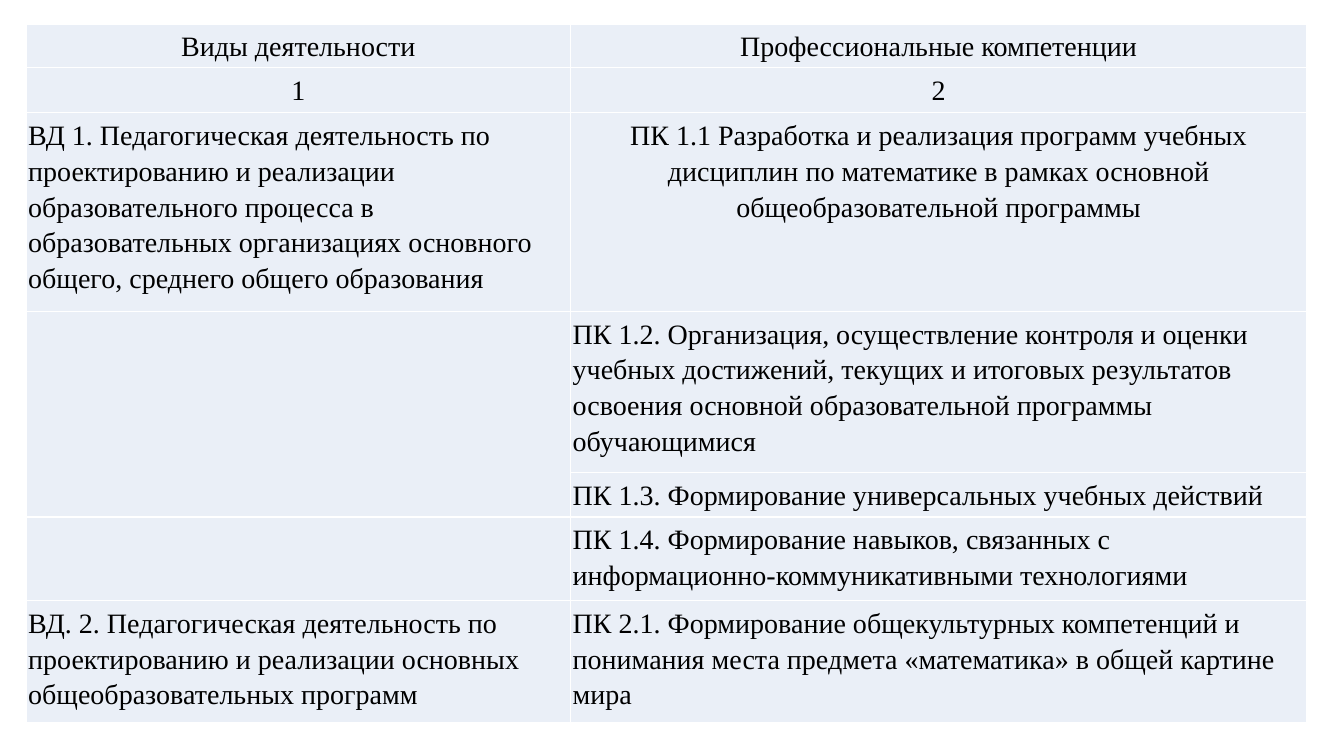
from dataclasses import dataclass

from lxml import etree
from pptx import Presentation
from pptx.dml.color import RGBColor
from pptx.enum.text import PP_ALIGN
from pptx.oxml.ns import qn
from pptx.util import Inches, Pt

LEFT, CENTER = PP_ALIGN.LEFT, PP_ALIGN.CENTER
COLORS = {"text": "000000", "cell": "EAEFF7", "border": "FFFFFF"}
FONT = "Times New Roman"
COLUMN_WIDTHS = (5.4, 7.3)


@dataclass(frozen=True)
class CompetencyRow:
    height: float
    activity: str
    competency: str
    activity_align: PP_ALIGN = LEFT
    competency_align: PP_ALIGN = LEFT


ROWS = [
    CompetencyRow(0.43, "Виды деятельности", "Профессиональные компетенции", CENTER, CENTER),
    CompetencyRow(0.45, "1", "2", CENTER, CENTER),
    CompetencyRow(
        1.97,
        "ВД 1. Педагогическая деятельность по проектированию и реализации "
        "образовательного процесса в образовательных организациях основного "
        "общего, среднего общего образования",
        "ПК 1.1 Разработка и реализация программ учебных дисциплин по "
        "математике в рамках основной общеобразовательной программы",
        competency_align=CENTER,
    ),
    CompetencyRow(
        1.6,
        "",
        "ПК 1.2. Организация, осуществление контроля и оценки учебных "
        "достижений, текущих и итоговых результатов освоения основной "
        "образовательной программы обучающимися",
    ),
    CompetencyRow(0.44, "", "ПК 1.3. Формирование универсальных учебных действий"),
    CompetencyRow(
        0.83,
        "",
        "ПК 1.4. Формирование навыков, связанных с "
        "информационно-коммуникативными технологиями",
    ),
    CompetencyRow(
        1.21,
        "ВД. 2. Педагогическая деятельность по проектированию и реализации "
        "основных общеобразовательных программ",
        "ПК 2.1. Формирование общекультурных компетенций и понимания места "
        "предмета «математика» в общей картине мира",
    ),
]


def add_borders(cell) -> None:
    properties = cell._tc.get_or_add_tcPr()
    for side in ("a:lnL", "a:lnR", "a:lnT", "a:lnB"):
        line = etree.SubElement(properties, qn(side), w=str(Pt(1)))
        fill = etree.SubElement(line, qn("a:solidFill"))
        etree.SubElement(fill, qn("a:srgbClr"), val=COLORS["border"])


def fill_cell(cell, text: str, align: PP_ALIGN) -> None:
    add_borders(cell)
    cell.fill.solid()
    cell.fill.fore_color.rgb = RGBColor.from_string(COLORS["cell"])
    cell.margin_left = cell.margin_right = Inches(0.02)
    cell.margin_top = cell.margin_bottom = Inches(0.03)
    if not text:
        return
    cell.text = text
    paragraph = cell.text_frame.paragraphs[0]
    paragraph.alignment = align
    paragraph.line_spacing = 1.15
    paragraph.font.name = FONT
    paragraph.font.size = Pt(20)
    paragraph.font.bold = False
    paragraph.font.color.rgb = RGBColor.from_string(COLORS["text"])


def add_competency_table(slide) -> None:
    table = slide.shapes.add_table(
        len(ROWS), len(COLUMN_WIDTHS), Inches(0.26), Inches(0.24),
        Inches(sum(COLUMN_WIDTHS)), Inches(sum(row.height for row in ROWS)),
    ).table
    table.first_row = False
    table.horz_banding = False
    for column, width in zip(table.columns, COLUMN_WIDTHS):
        column.width = Inches(width)
    for index, row in enumerate(ROWS):
        table.rows[index].height = Inches(row.height)
        fill_cell(table.cell(index, 0), row.activity, row.activity_align)
        fill_cell(table.cell(index, 1), row.competency, row.competency_align)
    # The blank activity cell spans ПК 1.2 and ПК 1.3
    table.cell(3, 0).merge(table.cell(4, 0))


def main() -> None:
    presentation = Presentation()
    presentation.slide_width = Inches(13.33)
    presentation.slide_height = Inches(7.5)
    slide = presentation.slides.add_slide(presentation.slide_layouts[6])
    add_competency_table(slide)
    presentation.save("out.pptx")


if __name__ == "__main__":
    main()
